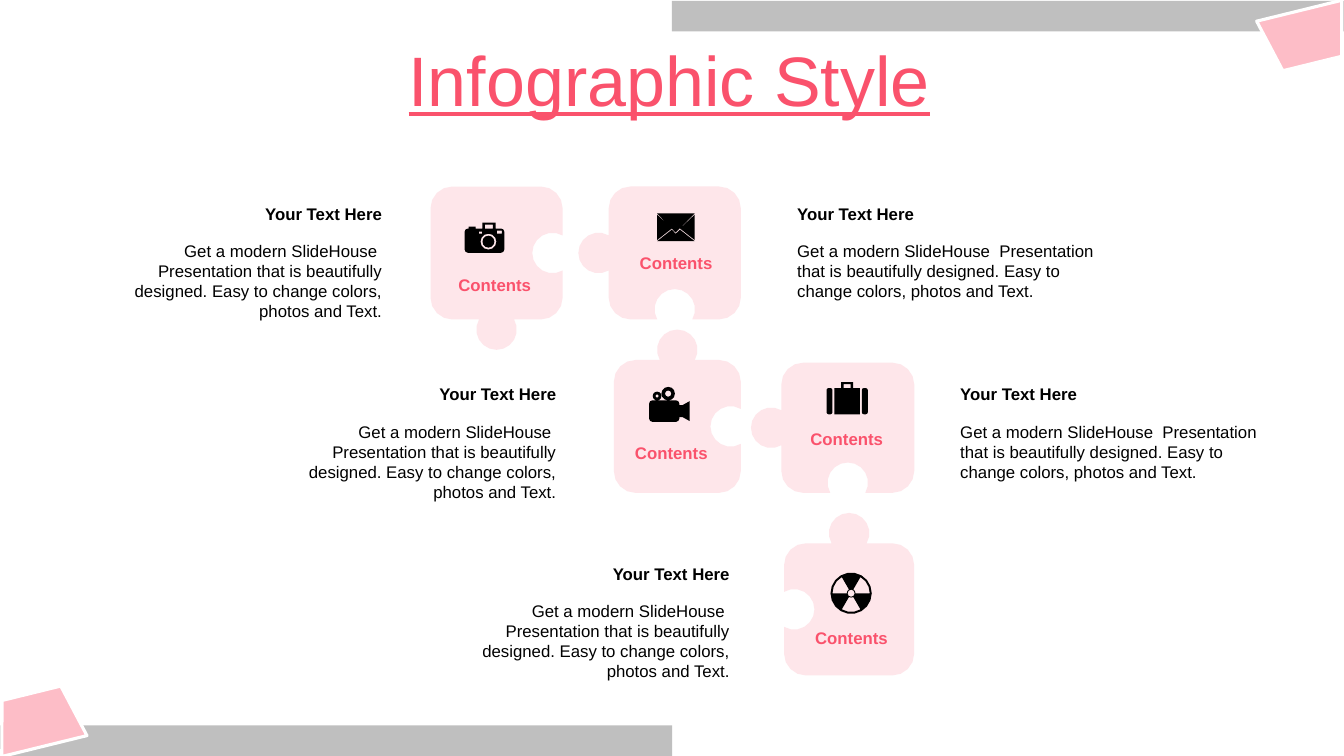
"""Build the puzzle infographic slide."""
from dataclasses import dataclass, field
from math import cos, radians, sin

from pptx import Presentation
from pptx.dml.color import RGBColor
from pptx.enum import shapes, text
from pptx.util import Cm, Pt

FONT = "Arial"
ACCENT, BLUSH, ROSE = "FA526C", "FEE6EA", "FDBDC7"
BLACK, WHITE, GREY = "000000", "FFFFFF", "BFBFBF"
KNOB_RADIUS = 0.51
TOP, RIGHT, BOTTOM, LEFT = range(4)
TAB, NOTCH = 1, -1
HEADING = "Your Text Here"
BODY = ("Get a modern SlideHouse  Presentation that is beautifully designed. "
        "Easy to change colors, photos and Text.")

Outline = list[complex]


@dataclass
class Box:
    x: float
    y: float
    w: float
    h: float
    radius: float = 0
    knobs: dict[int, int] = field(default_factory=dict)


@dataclass
class Piece:
    box: Box
    caption_x: float
    caption_y: float
    icon_at: complex
    icon: list[Outline]


@dataclass
class Note:
    x: float
    y: float
    right_aligned: bool


def color(value: str) -> RGBColor:
    return RGBColor.from_string(value)


def arc(center: complex, radius: float, normal: complex, start: float, end: float) -> Outline:
    if not radius:
        return [center]
    step = 45 if radius < 0.1 else 30 if radius < 0.3 else 20
    steps = round(abs(end - start) / step)
    angles = [radians(start + (end - start) * i / steps) for i in range(steps + 1)]
    return [center + radius * normal * complex(cos(a), sin(a)) for a in angles]


def circle(x: float, y: float, radius: float) -> Outline:
    return arc(complex(x, y), radius, 1, 0, 360)


def outline(box: Box) -> Outline:
    center = complex(box.x + box.w / 2, box.y + box.h / 2)
    halves = (box.h / 2, box.w / 2)
    points: Outline = []
    for side in (TOP, RIGHT, BOTTOM, LEFT):
        normal = (-1j, 1, 1j, -1)[side]
        half, next_half = halves[side % 2], halves[(side + 1) % 2]
        knob = box.knobs.get(side)
        if knob:
            start, end = (-120, 120) if knob == TAB else (300, 60)
            knob_center = center + normal * (half + knob * KNOB_RADIUS / 2)
            points += arc(knob_center, KNOB_RADIUS, normal, start, end)
        corner = center + normal * complex(half - box.radius, next_half - box.radius)
        points += arc(corner, box.radius, normal, 0, 90)
    return points


def wedge(start: float) -> Outline:
    return arc(0, 0.47, 1, start, start + 60) + arc(0, 0.11, 1, start + 60, start)


def draw(s, outlines: list[Outline], fill: str, origin: complex = 0) -> None:
    builder = None
    for points in outlines:
        spots = [(Cm(p.real), Cm(p.imag)) for p in (origin + q for q in points)]
        if builder is None:
            builder = s.shapes.build_freeform(*spots[0])
        else:
            builder.move_to(*spots[0])
        builder.add_line_segments(spots[1:], close=True)
    sp = builder.convert_to_shape()
    sp.shadow.inherit = False
    sp.fill.solid()
    sp.fill.fore_color.rgb = color(fill)
    sp.line.fill.background()


def add_preset(s, kind, box: Box, fill: str, rotation: float = 0, line: str = "") -> None:
    sp = s.shapes.add_shape(kind, Cm(box.x), Cm(box.y), Cm(box.w), Cm(box.h))
    sp.shadow.inherit = False
    sp.rotation = rotation
    sp.fill.solid()
    sp.fill.fore_color.rgb = color(fill)
    if line:
        sp.line.color.rgb = color(line)
        sp.line.width = Pt(2.25)
    else:
        sp.line.fill.background()


def add_text(s, box: Box, words: str, align, fill: str = BLACK, bold: bool = False,
             size: float = 12):
    tf = s.shapes.add_textbox(Cm(box.x), Cm(box.y), Cm(box.w), Cm(box.h)).text_frame
    tf.word_wrap = True
    p = tf.paragraphs[0]
    p.text = words
    p.alignment = align
    p.font.name, p.font.size, p.font.bold = FONT, Pt(size), bold
    p.font.color.rgb = color(fill)
    return tf


CAMERA = [outline(Box(0, 0.15, 1, 0.61, 0.08)), outline(Box(0.45, 0, 0.33, 0.15)),
          outline(Box(0.51, 0.05, 0.2, 0.1)), outline(Box(0.1, 0.1, 0.18, 0.05)),
          outline(Box(0.36, 0.23, 0.08, 0.05)), outline(Box(0.81, 0.2, 0.13, 0.08)),
          circle(0.6, 0.48, 0.2), circle(0.6, 0.48, 0.15)]
ENVELOPE = [[0.58 + 0.41j, 0.95 + 0.7j, 0.7j, 0.37 + 0.41j, 0.47 + 0.51j],
            [0.95 + 0.03j, 0.95 + 0.67j, 0.58 + 0.38j],
            [0.03j, 0.37 + 0.38j, 0.67j], [0j, 0.95 + 0j, 0.47 + 0.48j]]
MOVIE = [outline(Box(0, 0.34, 0.76, 0.54, 0.08)),
         [0.76 + 0.46j, 0.84 + 0.46j, 1.02 + 0.36j, 1.02 + 0.86j, 0.84 + 0.76j, 0.76 + 0.76j],
         circle(0.48, 0.17, 0.17), circle(0.48, 0.17, 0.08),
         circle(0.2, 0.23, 0.11), circle(0.2, 0.23, 0.04)]
SUITCASE = [outline(Box(0, 0.15, 0.15, 0.66, 0.05)), outline(Box(0.2, 0.15, 0.64, 0.66)),
            outline(Box(0.89, 0.15, 0.15, 0.66, 0.05)),
            outline(Box(0.37, 0, 0.3, 0.15)), outline(Box(0.43, 0.05, 0.18, 0.1))]
RADIATION = [circle(0, 0, 0.52), circle(0, 0, 0.09), *(wedge(a) for a in (60, 180, 300))]

PIECES = [
    Piece(Box(10.85, 4.7, 3.33, 3.35, 0.55, {RIGHT: NOTCH, BOTTOM: TAB}),
          10.97, 6.81, 11.71 + 5.61j, CAMERA),
    Piece(Box(15.34, 4.7, 3.33, 3.35, 0.55, {BOTTOM: NOTCH, LEFT: TAB}),
          15.54, 6.25, 16.56 + 5.38j, ENVELOPE),
    Piece(Box(15.47, 9.07, 3.2, 3.35, 0.55, {TOP: TAB, RIGHT: NOTCH}),
          15.42, 11.02, 16.36 + 9.75j, MOVIE),
    Piece(Box(19.69, 9.14, 3.35, 3.28, 0.55, {BOTTOM: NOTCH, LEFT: TAB}),
          19.84, 10.69, 20.83 + 9.63j, SUITCASE),
    Piece(Box(19.76, 13.69, 3.28, 3.33, 0.55, {TOP: TAB, LEFT: NOTCH}),
          19.96, 15.7, 21.45 + 14.95j, RADIATION),
]
NOTES = [Note(1.96, 5, True), Note(19.84, 5, False), Note(6.35, 9.55, True),
         Note(23.95, 9.55, False), Note(10.72, 14.07, True)]


def main() -> None:
    prs = Presentation()
    prs.slide_width, prs.slide_height = Cm(33.87), Cm(19.05)
    s = prs.slides.add_slide(prs.slide_layouts[6])
    kinds, align = shapes.MSO_SHAPE, text.PP_ALIGN

    for bar, corner, rotation in (
            (Box(16.93, 0.02, 16.94, 0.77), Box(31.8, 0.25, 2.21, 1.37), 166.2),
            (Box(0, 18.28, 16.94, 0.77), Box(-0.15, 17.45, 2.21, 1.37), 346.2)):
        add_preset(s, kinds.RECTANGLE, bar, GREY)
        add_preset(s, kinds.TRAPEZOID, corner, ROSE, rotation, WHITE)

    tf = add_text(s, Box(0.79, 1.17, 32.16, 2), "Infographic Style", align.CENTER, ACCENT, size=50)
    tf.vertical_anchor = text.MSO_ANCHOR.MIDDLE
    p = tf.paragraphs[0]
    p.font.underline = True
    p.line_spacing = 0.8

    for piece in PIECES:
        draw(s, [outline(piece.box)], BLUSH)
        draw(s, piece.icon, BLACK, piece.icon_at)
        add_text(s, Box(piece.caption_x, piece.caption_y, 3, 0.76), "Contents",
                 align.CENTER, ACCENT, bold=True)

    for note in NOTES:
        side, w, h = (align.RIGHT, 7.92, 2.31) if note.right_aligned else (align.LEFT, 8.08, 1.8)
        add_text(s, Box(note.x, note.y, w, 0.76), HEADING, side, bold=True)
        add_text(s, Box(note.x, note.y + 0.94, w, h), BODY, side)

    prs.save("out.pptx")


if __name__ == "__main__":
    main()
